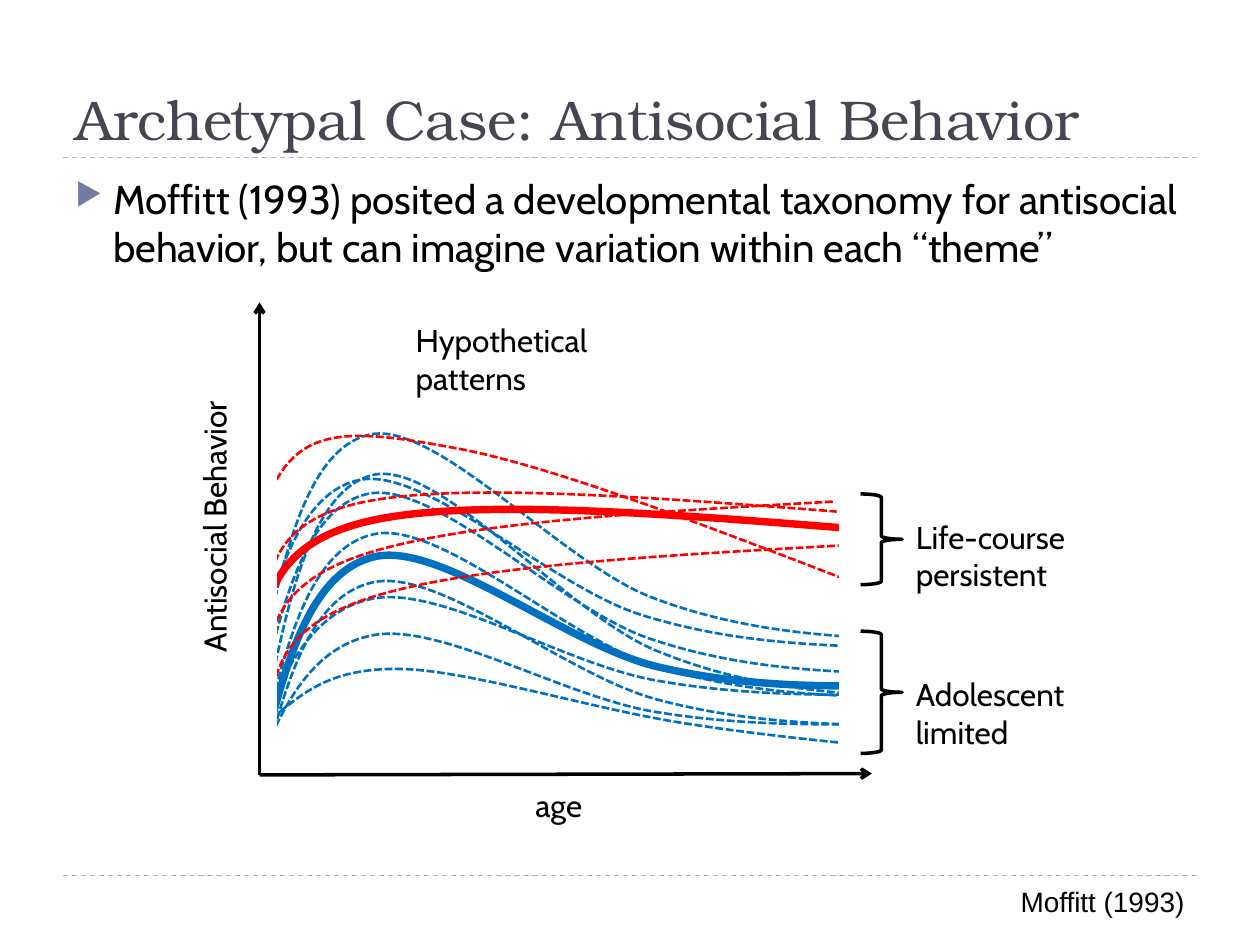
from lxml import etree
from pptx import Presentation
from pptx import util as u
from pptx.dml.color import RGBColor
from pptx.enum import dml, shapes, text
from pptx.oxml import ns

presentation = Presentation()
presentation.slide_width, presentation.slide_height = u.Inches(10), u.Inches(7.5)
slide = presentation.slides.add_slide(presentation.slide_layouts[6])
CELL = presentation.slide_width // 10  # square grid: 10 columns by 7.5 rows


def style_line(shape, color, width, dash=None):
    """Set the outline and leave out the theme's shadow."""
    shape.line.color.rgb = RGBColor.from_string(color)
    for name, value in {"width": u.Pt(width), "dash_style": dash}.items():
        setattr(shape.line, name, value)
    properties = shape.element.spPr
    if properties.find(ns.qn("a:effectLst")) is None:
        etree.SubElement(properties, ns.qn("a:effectLst"))


def add_text(words, box, size, name="Cabin", color="000000",
             align=text.PP_ALIGN.LEFT, anchor=text.MSO_ANCHOR.TOP):
    """Add a wrapping text box at a grid box and return it."""
    shape = slide.shapes.add_textbox(*[round(value * CELL) for value in box])
    for key, value in {"word_wrap": True, "vertical_anchor": anchor}.items():
        setattr(shape.text_frame, key, value)
    paragraph = shape.text_frame.paragraphs[0]
    paragraph.text, paragraph.alignment = words, align
    for run in paragraph.runs:
        for key, value in {"size": u.Pt(size), "name": name}.items():
            setattr(run.font, key, value)
        run.font.color.rgb = RGBColor.from_string(color)
    return shape


# Divider lines
for row in (6.95, 1.25):
    divider = slide.shapes.add_connector(
        shapes.MSO_CONNECTOR.STRAIGHT,
        *[round(value * CELL) for value in (0.5, row, 9.5, row)])
    style_line(divider, "9FB8CD", 0.75, dml.MSO_LINE.DASH)

# Title and bullet
add_text("Archetypal Case: Antisocial Behavior", (0.5, 0.17, 9, 1.08), 32,
         "TeX Gyre Bonum", "464653", anchor=text.MSO_ANCHOR.BOTTOM)
body = add_text("Moffitt (1993) posited a developmental taxonomy for antisocial "
                "behavior, but can imagine variation within each “theme”",
                (0.5, 1.33, 9, 0.95), 23)
paragraph = body.text_frame.paragraphs[0]
paragraph.space_before = u.Pt(6)
bullet = paragraph._p.get_or_add_pPr()
bullet.set("marL", str(round(0.3 * CELL)))
bullet.set("indent", str(round(-0.3 * CELL)))
bullet_color = etree.SubElement(bullet, ns.qn("a:buClr"))
etree.SubElement(bullet_color, ns.qn("a:srgbClr"), val="727CA3")
etree.SubElement(bullet, ns.qn("a:buSzPct"), val="76000")
etree.SubElement(bullet, ns.qn("a:buChar"), char="▶")

# Trajectories as x + yj nodes; the last of each family is its thick, solid mean.
# Adolescent ones share their column steps: start, peak, bend and end.
NARROW, WIDE = (0, 0.9, 3.14, 5.16), (0, 0.98, 3.21, 5.26)
adolescent = [
    [complex(left + step, row) for step, row in zip(steps, rows)]
    for left, steps, rows in [
        (2.02, NARROW, (5.76, 3.92, 5.07, 5.35)),
        (1.99, WIDE, (5.98, 4.75, 5.4, 5.51)),
        (2.22, WIDE, (5.65, 5.31, 5.74, 5.97)),
        (2.03, NARROW, (5.48, 3.45, 4.74, 5.08)),
        (2.07, NARROW, (5.96, 4.24, 5.29, 5.54)),
        (2.06, NARROW, (5.92, 3.77, 5.16, 5.54)),
        (1.95, NARROW, (5.56, 3.81, 4.88, 5.14)),
        (1.99, WIDE, (6.22, 5.04, 5.65, 5.74)),
        (2.07, NARROW, (6.19, 4.62, 5.55, 5.76)),
        (2.07, NARROW, (6.05, 4.42, 5.29, 5.44)),
    ]
]
persistent = [
    [2.1 + 4.95j, 2.91 + 3.98j, 6.64 + 4.06j],
    [2.14 + 5.59j, 2.83 + 4.42j, 6.63 + 3.98j],
    [2.15 + 5.79j, 2.23 + 3.75j, 3.63 + 3.56j, 6.66 + 4.58j],
    [2.16 + 5.95j, 2.86 + 4.77j, 6.66 + 4.33j],
    [2.04 + 5.34j, 2.91 + 4.14j, 6.82 + 4.2j],
]
for color, family in {"0070C0": adolescent, "FF0000": persistent}.items():
    group = slide.shapes.add_group_shape()
    for nodes in family:
        # Each inner node gets handles along the chord of its neighbours
        inner = []
        for before, node, after in zip(nodes, nodes[1:], nodes[2:]):
            handle = (after - before) / 6
            inner += [node - handle, node, node + handle]
        start, end = nodes[0], nodes[-1]
        curve = [start, (start + inner[0]) / 2, *inner, (inner[-1] + end) / 2, end]
        points = [(round(p.real * CELL), round(p.imag * CELL)) for p in curve]
        builder = group.shapes.build_freeform(*points[0])
        builder.add_line_segments(points[1:], close=False)
        shape = builder.convert_to_shape()
        shape.fill.background()
        if nodes is family[-1]:
            style_line(shape, color, 4.25)
        else:
            style_line(shape, color, 1.5, dml.MSO_LINE.SQUARE_DOT)
        # Turn every three straight segments into one cubic curve
        outline = next(shape.element.iter(ns.qn("a:path")))
        segments = outline.findall(ns.qn("a:lnTo"))
        for first in range(0, len(segments), 3):
            cubic = etree.SubElement(outline, ns.qn("a:cubicBezTo"))
            for segment in segments[first:first + 3]:
                cubic.append(segment[0])
                outline.remove(segment)

# White panels trim the curve ends; braces bracket the two families
panel, brace = shapes.MSO_SHAPE.RECTANGLE, shapes.MSO_SHAPE.RIGHT_BRACE
for kind, box, color, width in [
    (panel, (6.67, 3.38, 0.92, 2.62), "FFFFFF", 1.5),
    (panel, (1.27, 3.25, 0.92, 3.17), "FFFFFF", 1.5),
    (brace, (6.83, 5.01, 0.33, 0.97), "000000", 2),
    (brace, (6.83, 3.92, 0.33, 0.72), "000000", 2),
]:
    shape = slide.shapes.add_shape(kind, *[round(value * CELL) for value in box])
    if kind == panel:
        shape.fill.solid()
        shape.fill.fore_color.rgb = RGBColor.from_string(color)
    else:
        shape.fill.background()
    style_line(shape, color, width)

# Axes
for end in ((2.06, 2.4), (6.92, 6.14)):
    axis = slide.shapes.add_connector(
        shapes.MSO_CONNECTOR.STRAIGHT,
        *[round(value * CELL) for value in (2.06, 6.15, *end)])
    style_line(axis, "000000", 2)
    outline = axis.element.spPr.find(ns.qn("a:ln"))
    etree.SubElement(outline, ns.qn("a:tailEnd"), type="arrow")

# Labels
add_text("age", (4.15, 6.19, 0.7, 0.39), 18)
axis_label = add_text("Antisocial Behavior", (0.46, 3.98, 2.48, 0.4), 18,
                      align=text.PP_ALIGN.CENTER)
axis_label.rotation = 270
for words, left, top in [
    ("Life-course\vpersistent", 7.17, 4.06),
    ("Adolescent\vlimited", 7.17, 5.31),
    ("Hypothetical\vpatterns", 3.2, 2.5),
]:
    add_text(words, (left, top, 2.42, 0.4), 18)
add_text("Moffitt (1993)", (7.9, 6.97, 1.6, 0.37), 16, "Arial",
         align=text.PP_ALIGN.RIGHT)

presentation.save("out.pptx")
